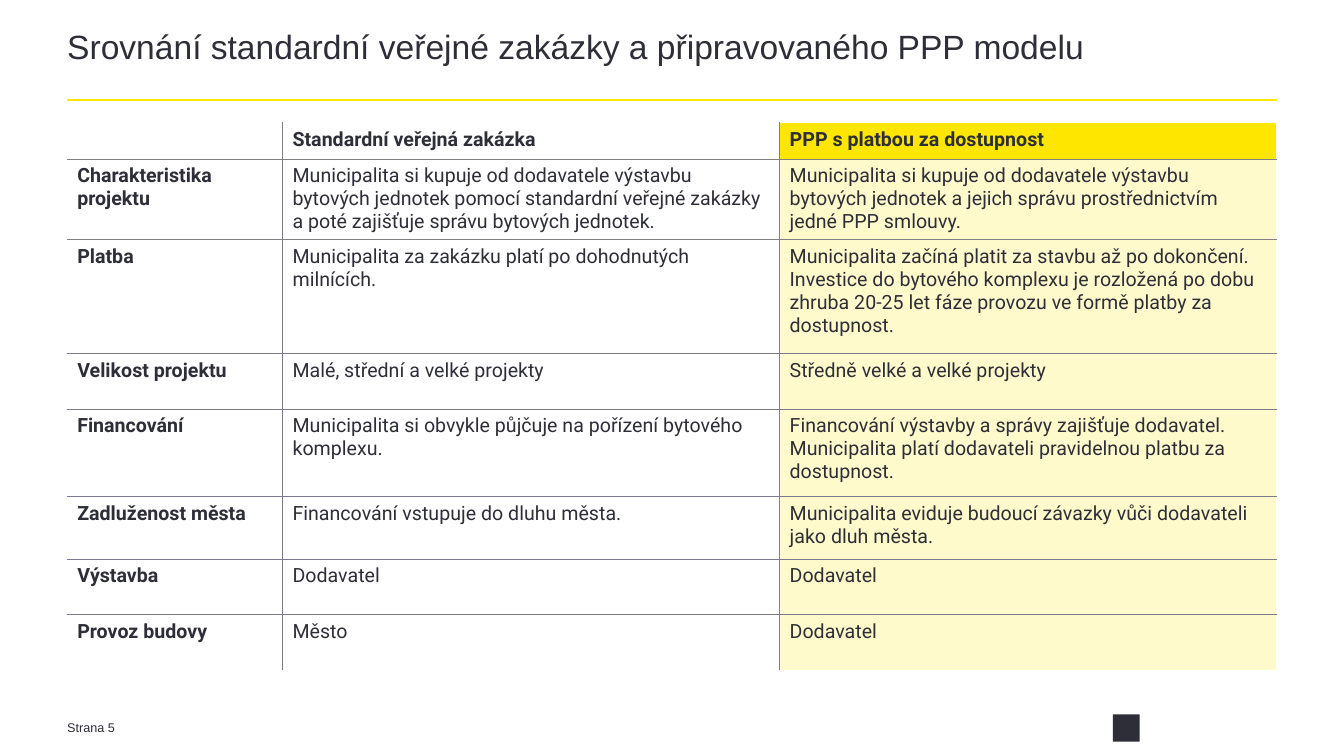
from dataclasses import dataclass
from typing import Optional

from lxml import etree
from pptx import Presentation
from pptx.dml.color import RGBColor
from pptx.enum.shapes import MSO_CONNECTOR, MSO_SHAPE
from pptx.oxml.ns import qn
from pptx.util import Inches, Pt

STRAIGHT = MSO_CONNECTOR.STRAIGHT
RECTANGLE = MSO_SHAPE.RECTANGLE
SLIDE_WIDTH, SLIDE_HEIGHT = Inches(13.34), Inches(7.5)
BLANK_LAYOUT = 6


@dataclass(frozen=True)
class Theme:
    ink: str = "2E2E38"
    accent: str = "FFE600"
    accent_tint: str = "FFFACC"
    white: str = "FFFFFF"
    grey: str = "808080"
    violet_grey: str = "797991"
    heading_font: str = "Arial"
    table_font: str = "Roboto"
    title_size: float = 24
    table_size: float = 14
    footer_size: float = 9
    rule_width: float = 1.5


THEME = Theme()


@dataclass(frozen=True)
class Label:
    """Text with its box in shares of the slide's size."""
    text: str
    left: float
    top: float
    width: float
    height: float
    size: float
    inset_top: float = 0


@dataclass(frozen=True)
class Criterion:
    """One table row; height is a percentage of the slide's height."""
    name: str
    standard: str
    ppp: str
    height: float


@dataclass(frozen=True)
class Edge:
    color: str
    width: float = 1


MARGIN, CONTENT = 0.05, 0.9
RULE_TOP = 0.132
TABLE_TOP = 0.1625
COLUMN_SHARES = (0.178, 0.411, 0.411)
BADGE_BOX = (0.828, 0.945, 0.02, 0.036)

LABELS = (
    Label("Srovnání standardní veřejné zakázky a připravovaného PPP modelu",
          MARGIN, 0.043, CONTENT, 0.087, THEME.title_size),
    Label("Strana 5", MARGIN, 0.95, 0.075, 0.023, THEME.footer_size, 0.04),
)

CRITERIA = (
    Criterion("", "Standardní veřejná zakázka", "PPP s platbou za dostupnost", 4.8),
    Criterion(
        "Charakteristika projektu",
        "Municipalita si kupuje od dodavatele výstavbu bytových jednotek pomocí "
        "standardní veřejné zakázky a poté zajišťuje správu bytových jednotek.",
        "Municipalita si kupuje od dodavatele výstavbu bytových jednotek a jejich "
        "správu prostřednictvím jedné PPP smlouvy.", 10.5),
    Criterion(
        "Platba",
        "Municipalita za zakázku platí po dohodnutých milnících.",
        "Municipalita začíná platit za stavbu až po dokončení. Investice do bytového "
        "komplexu je rozložená po dobu zhruba 20-25 let fáze provozu ve formě platby "
        "za dostupnost.", 15.07),
    Criterion("Velikost projektu", "Malé, střední a velké projekty",
              "Středně velké a velké projekty", 7.33),
    Criterion(
        "Financování",
        "Municipalita si obvykle půjčuje na pořízení bytového komplexu.",
        "Financování výstavby a správy zajišťuje dodavatel. Municipalita platí "
        "dodavateli pravidelnou platbu za dostupnost.", 11.6),
    Criterion(
        "Zadluženost města",
        "Financování vstupuje do dluhu města.",
        "Municipalita eviduje budoucí závazky vůči dodavateli jako dluh města.", 8.27),
    Criterion("Výstavba", "Dodavatel", "Dodavatel", 7.33),
    Criterion("Provoz budovy", "Město", "Dodavatel", 7.33),
)


def across(share: float) -> int:
    return round(SLIDE_WIDTH * share)


def down(share: float) -> int:
    return round(SLIDE_HEIGHT * share)


def write(paragraph, text: str, font_name: str, size: float, bold: bool = False) -> None:
    run = paragraph.add_run()
    run.text = text
    for attribute, value in {"name": font_name, "size": Pt(size), "bold": bold}.items():
        setattr(run.font, attribute, value)
    run.font.color.rgb = RGBColor.from_string(THEME.ink)


def add_label(slide, label: Label) -> None:
    box = slide.shapes.add_textbox(across(label.left), down(label.top),
                                   across(label.width), down(label.height))
    frame_format = {"word_wrap": True, "margin_left": 0, "margin_right": 0,
                    "margin_top": Inches(label.inset_top), "margin_bottom": 0}
    for attribute, value in frame_format.items():
        setattr(box.text_frame, attribute, value)
    paragraph = box.text_frame.paragraphs[0]
    paragraph.line_spacing = 0.85
    write(paragraph, label.text, THEME.heading_font, label.size)


def add_title_rule(slide) -> None:
    rule = slide.shapes.add_connector(STRAIGHT, across(MARGIN), down(RULE_TOP),
                                      across(MARGIN + CONTENT), down(RULE_TOP))
    rule.line.color.rgb = RGBColor.from_string(THEME.accent)
    rule.line.width = Pt(THEME.rule_width)
    etree.SubElement(rule._element.spPr, qn("a:effectLst"))


def add_badge(slide) -> None:
    left, top, width, height = BADGE_BOX
    badge = slide.shapes.add_shape(RECTANGLE, across(left), down(top),
                                   across(width), down(height))
    badge.shadow.inherit = False
    badge.fill.solid()
    badge.fill.fore_color.rgb = RGBColor.from_string(THEME.ink)
    badge.line.fill.background()


def vertical_edge(index: int, row: int) -> Edge:
    """Edge to the left of column `index`; the last one closes the table."""
    if index in (0, len(COLUMN_SHARES)):
        return Edge(THEME.white)
    if index == 2:
        return Edge(THEME.grey, 0.75)
    return Edge(THEME.grey if row == 0 else THEME.violet_grey)


def horizontal_edge(index: int) -> Optional[Edge]:
    """Edge above row `index`; the table is open at the bottom."""
    if index == len(CRITERIA):
        return None
    if index == 0:
        return Edge(THEME.white)
    return Edge(THEME.grey if index <= 2 else THEME.violet_grey)


def draw_edge(cell, side: str, edge: Optional[Edge]) -> None:
    line = etree.SubElement(cell._tc.get_or_add_tcPr(), qn(f"a:ln{side}"))
    if edge is None:
        etree.SubElement(line, qn("a:noFill"))
        return
    line.set("w", str(Pt(edge.width)))
    fill = etree.SubElement(line, qn("a:solidFill"))
    etree.SubElement(fill, qn("a:srgbClr")).set("val", edge.color)


def fill_cell(cell, row: int, column: int) -> None:
    if column < 2:
        cell.fill.background()
        return
    cell.fill.solid()
    color = THEME.accent if row == 0 else THEME.accent_tint
    cell.fill.fore_color.rgb = RGBColor.from_string(color)


def write_cell(cell, text: str, bold: bool) -> None:
    """Write the text, or keep an empty cell's line as low as the others."""
    paragraph = cell.text_frame.paragraphs[0]
    if text:
        write(paragraph, text, THEME.table_font, THEME.table_size, bold)
    else:
        line_end = etree.SubElement(paragraph._p, qn("a:endParaRPr"))
        line_end.set("sz", str(round(THEME.table_size * 100)))


def add_comparison(slide) -> None:
    total_height = sum(criterion.height for criterion in CRITERIA) / 100
    comparison = slide.shapes.add_table(
        len(CRITERIA), len(COLUMN_SHARES), across(MARGIN), down(TABLE_TOP),
        across(CONTENT), down(total_height)).table
    comparison.first_row = comparison.horz_banding = False
    for column, share in zip(comparison.columns, COLUMN_SHARES):
        column.width = across(CONTENT * share)
    for row, criterion in enumerate(CRITERIA):
        comparison.rows[row].height = down(criterion.height / 100)
        for column, text in enumerate((criterion.name, criterion.standard, criterion.ppp)):
            cell = comparison.cell(row, column)
            edges = {"L": vertical_edge(column, row), "R": vertical_edge(column + 1, row),
                     "T": horizontal_edge(row), "B": horizontal_edge(row + 1)}
            for side, edge in edges.items():
                draw_edge(cell, side, edge)
            fill_cell(cell, row, column)
            write_cell(cell, text, bold=row == 0 or column == 0)


def main() -> None:
    presentation = Presentation()
    presentation.slide_width, presentation.slide_height = SLIDE_WIDTH, SLIDE_HEIGHT
    slide = presentation.slides.add_slide(presentation.slide_layouts[BLANK_LAYOUT])
    add_badge(slide)
    for label in LABELS:
        add_label(slide, label)
    add_title_rule(slide)
    add_comparison(slide)
    presentation.save("out.pptx")


if __name__ == "__main__":
    main()
